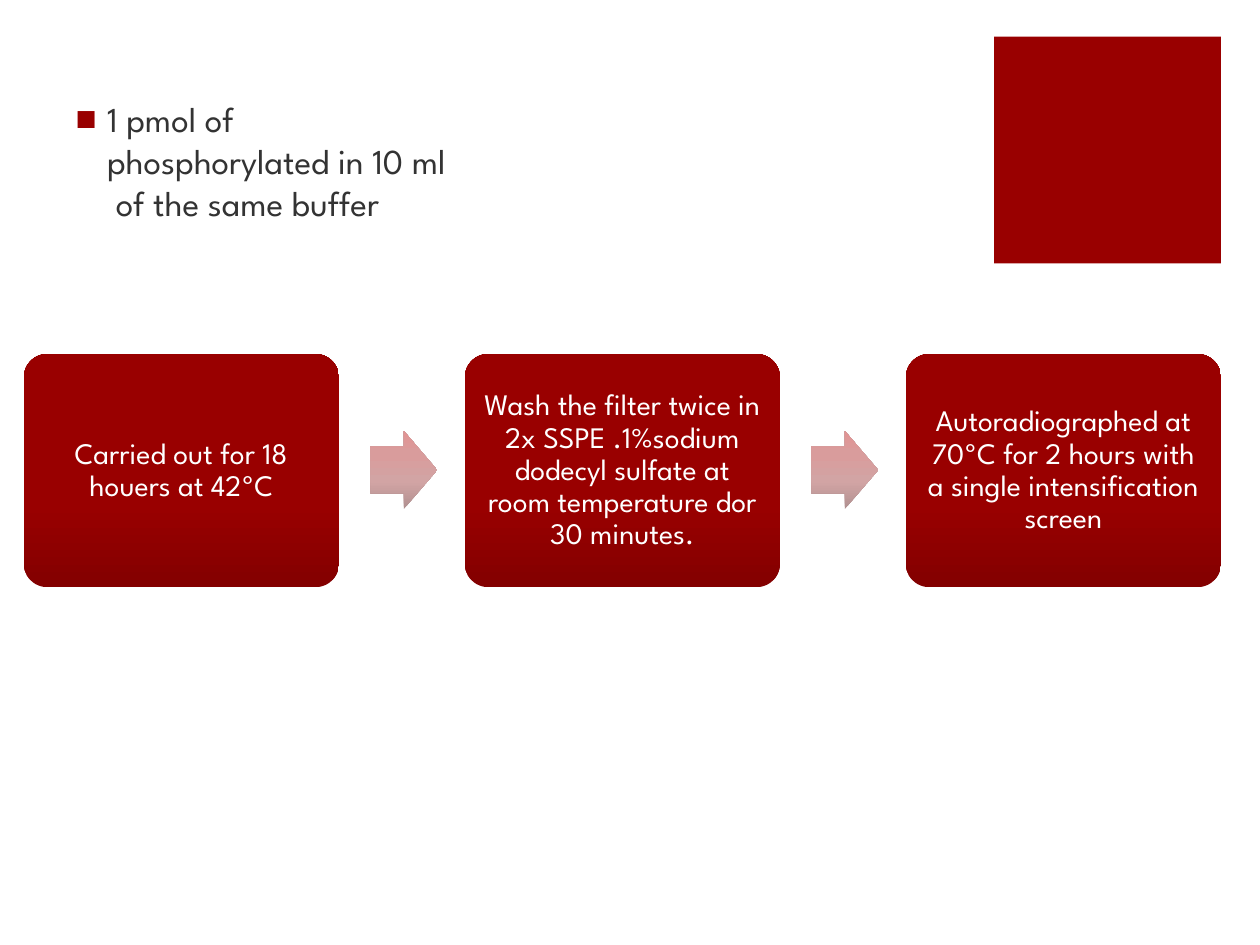
from typing import NamedTuple

from lxml.etree import SubElement
from pptx import Presentation
from pptx.dml.color import RGBColor
from pptx.enum.shapes import MSO_SHAPE
from pptx.enum.text import MSO_ANCHOR, MSO_AUTO_SIZE, PP_ALIGN
from pptx.oxml.ns import qn
from pptx.util import Inches, Pt

FONT = "League Spartan"
RED = "990000"


class Stop(NamedTuple):
    pos: int  # percent, counted from the bottom edge
    tone: str


BOX = [Stop(0, "830000"), Stop(35, RED), Stop(70, RED), Stop(100, RED)]
ARROW = [Stop(0, "B09090"), Stop(35, "D2A4A4"),
         Stop(70, "D99C9C"), Stop(100, "E19494")]

STEPS = [
    "Carried out for 18 houers at 42ºC",
    "Wash the filter twice in 2x SSPE .1%sodium dodecyl sulfate "
    "at room temperature dor 30 minutes.",
    "Autoradiographed at 70ºC for 2 hours with a single "
    "intensification screen",
]


def color(tone: str) -> RGBColor:
    return RGBColor.from_string(tone)


def write(frame, text: str, size: float, tone: str, align=PP_ALIGN.LEFT,
          anchor=MSO_ANCHOR.TOP, line=1.0, before=0.0, after=0.0):
    """Put one formatted paragraph in the frame and return it."""
    frame.word_wrap = True
    frame.auto_size = MSO_AUTO_SIZE.NONE
    frame.vertical_anchor = anchor
    para = frame.paragraphs[0]
    para.alignment = align
    para.line_spacing = line
    para.space_before, para.space_after = Pt(before), Pt(after)
    run = para.add_run()
    run.text = text
    run.font.name, run.font.size = FONT, Pt(size)
    run.font.color.rgb = color(tone)
    return para


def shade(fill, stops: list[Stop]) -> None:
    """Fill with a vertical gradient that starts at the bottom."""
    fill.gradient()
    fill.gradient_angle = 90
    group = fill.gradient_stops[0]._gs.getparent()
    group.clear()
    for stop in stops:
        mark = SubElement(group, qn("a:gs"), pos=str(stop.pos * 1000))
        SubElement(mark, qn("a:srgbClr"), val=stop.tone)


def draw(slide, kind, left: float, top: float, width: float, height: float):
    """Add a preset shape without line or shadow."""
    shape = slide.shapes.add_shape(
        kind, Inches(left), Inches(top), Inches(width), Inches(height))
    shape.shadow.inherit = False
    shape.line.fill.background()
    return shape


def bullet(para, sign: str, tone: str, indent: float) -> None:
    """Give the paragraph a coloured bullet and a hanging indent."""
    props = para._p.get_or_add_pPr()
    props.set("marL", str(Inches(indent)))
    props.set("indent", str(-Inches(indent)))
    SubElement(SubElement(props, qn("a:buClr")), qn("a:srgbClr"), val=tone)
    SubElement(props, qn("a:buFont"), typeface="Arial")
    SubElement(props, qn("a:buChar"), char=sign)


def main() -> None:
    deck = Presentation()
    deck.slide_width, deck.slide_height = Inches(10), Inches(7.5)
    slide = deck.slides.add_slide(deck.slide_layouts[1])
    title = slide.shapes.title.element
    title.getparent().remove(title)

    # Corner square
    square = draw(slide, MSO_SHAPE.RECTANGLE, 7.89, 0.29, 1.8, 1.8)
    square.fill.solid()
    square.fill.fore_color.rgb = color(RED)

    # Bulleted note
    body = slide.placeholders[1]
    body.left, body.top = Inches(0.5), Inches(0.72)
    body.width, body.height = Inches(3.2), Inches(1.72)
    note = write(body.text_frame,
                 "1 pmol of phosphorylated in 10 ml  of the same buffer",
                 20, "333333", before=18)
    bullet(note, "■", RED, 0.25)

    # Process steps with an arrow between neighbours
    for i, text in enumerate(STEPS):
        left = 0.19 + 3.5 * i
        box = draw(slide, MSO_SHAPE.ROUNDED_RECTANGLE, left, 2.81, 2.5, 1.85)
        box.adjustments[0] = 0.1
        shade(box.fill, BOX)
        frame = box.text_frame
        frame.margin_left = frame.margin_right = Inches(0.07)
        frame.margin_top = frame.margin_bottom = Inches(0.07)
        write(frame, text, 17, "FFFFFF", align=PP_ALIGN.CENTER,
              anchor=MSO_ANCHOR.MIDDLE, line=0.9, after=6)
        if i < len(STEPS) - 1:
            arrow = draw(slide, MSO_SHAPE.RIGHT_ARROW,
                         left + 2.75, 3.42, 0.53, 0.62)
            arrow.adjustments[0] = 0.6
            arrow.adjustments[1] = 0.5
            shade(arrow.fill, ARROW)

    deck.save("out.pptx")


if __name__ == "__main__":
    main()
